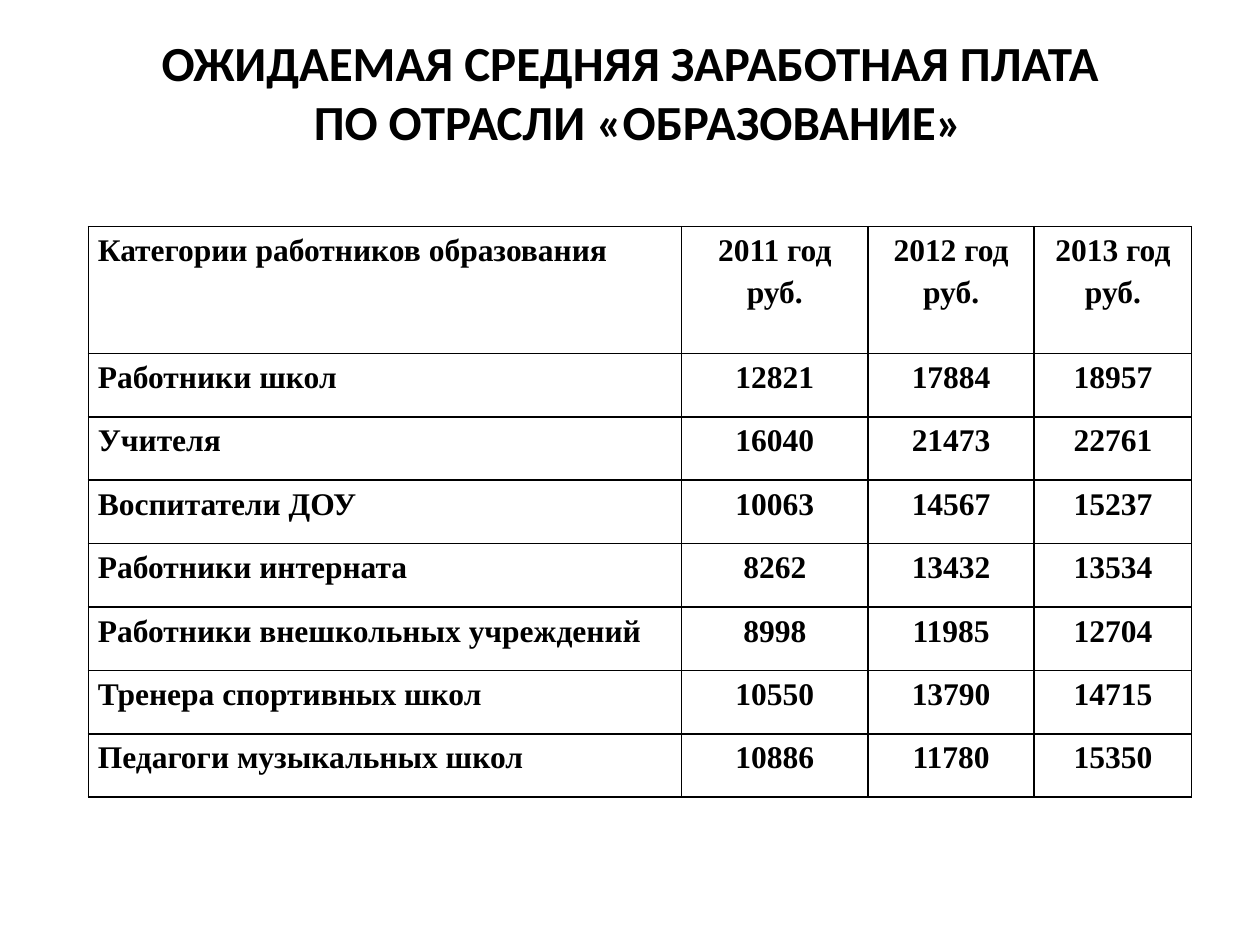
from dataclasses import dataclass

from lxml import etree
from pptx import Presentation
from pptx.dml.color import RGBColor
from pptx.enum import text as t
from pptx.oxml import ns
from pptx.util import Pt

COLORS = {"ink": "000000"}
INK = RGBColor.from_string(COLORS["ink"])
HEADING = ("ОЖИДАЕМАЯ СРЕДНЯЯ ЗАРАБОТНАЯ ПЛАТА", "ПО ОТРАСЛИ «ОБРАЗОВАНИЕ»")
YEARS = (2011, 2012, 2013)
COLUMN_WIDTHS = (339, 106.5, 95, 90)
HEADER_HEIGHT = 72.5
ROW_HEIGHT = 36.25


@dataclass(frozen=True)
class Salary:
    category: str
    amounts: tuple[int, int, int]


SALARIES = (
    Salary("Работники школ", (12821, 17884, 18957)),
    Salary("Учителя", (16040, 21473, 22761)),
    Salary("Воспитатели ДОУ", (10063, 14567, 15237)),
    Salary("Работники интерната", (8262, 13432, 13534)),
    Salary("Работники внешкольных учреждений", (8998, 11985, 12704)),
    Salary("Тренера спортивных школ", (10550, 13790, 14715)),
    Salary("Педагоги музыкальных школ", (10886, 11780, 15350)),
)


def format_runs(paragraph, face: str, size: float) -> None:
    for run in paragraph.runs:
        run.font.name = face
        run.font.size = Pt(size)
        run.font.bold = True
        run.font.color.rgb = INK


def draw_heading(slide) -> None:
    heading = slide.shapes.add_textbox(Pt(36), Pt(21.6), Pt(648), Pt(90))
    frame = heading.text_frame
    frame.word_wrap = True
    frame.vertical_anchor = t.MSO_ANCHOR.MIDDLE
    frame.margin_top = 0
    frame.margin_bottom = Pt(29)
    frame.text = "\n".join(HEADING)
    for paragraph in frame.paragraphs:
        paragraph.alignment = t.PP_ALIGN.CENTER
        format_runs(paragraph, "Calibri", 28)
    frame.paragraphs[1]._p.get_or_add_pPr().set("marL", str(Pt(9)))


def add_borders(cell) -> None:
    properties = cell._tc.get_or_add_tcPr()
    for side in ("lnL", "lnR", "lnT", "lnB"):
        border = etree.SubElement(properties, ns.qn(f"a:{side}"), w=str(Pt(1)))
        fill = etree.SubElement(border, ns.qn("a:solidFill"))
        etree.SubElement(fill, ns.qn("a:srgbClr"), val=COLORS["ink"])


def fill_cell(cell, content: str, alignment: t.PP_ALIGN) -> None:
    add_borders(cell)
    cell.fill.background()
    cell.margin_left = cell.margin_right = Pt(5.4)
    cell.margin_top = cell.margin_bottom = 0
    cell.vertical_anchor = t.MSO_ANCHOR.TOP
    cell.text_frame.text = content
    for paragraph in cell.text_frame.paragraphs:
        paragraph.alignment = alignment
        paragraph.line_spacing = 1.2
        tabs = etree.SubElement(paragraph._p.get_or_add_pPr(), ns.qn("a:tabLst"))
        etree.SubElement(tabs, ns.qn("a:tab"), pos=str(Pt(36)), algn="l")
        format_runs(paragraph, "Times New Roman", 18)


def draw_salaries(slide) -> None:
    header = ("Категории работников образования", *(f"{year} год\nруб." for year in YEARS))
    rows = [header] + [(s.category, *map(str, s.amounts)) for s in SALARIES]
    heights = [HEADER_HEIGHT] + [ROW_HEIGHT] * len(SALARIES)
    table = slide.shapes.add_table(
        len(rows), len(header), Pt(50.5), Pt(129.5), Pt(sum(COLUMN_WIDTHS)), Pt(sum(heights))
    ).table
    table.first_row = table.horz_banding = False
    for column, width in zip(table.columns, COLUMN_WIDTHS):
        column.width = Pt(width)
    for row, height, contents in zip(table.rows, heights, rows):
        row.height = Pt(height)
        for index, (cell, content) in enumerate(zip(row.cells, contents)):
            fill_cell(cell, content, t.PP_ALIGN.CENTER if index else t.PP_ALIGN.JUSTIFY)


def main() -> None:
    deck = Presentation()
    deck.slide_width, deck.slide_height = Pt(720), Pt(540)
    slide = deck.slides.add_slide(deck.slide_layouts[6])
    draw_heading(slide)
    draw_salaries(slide)
    deck.save("out.pptx")


if __name__ == "__main__":
    main()
